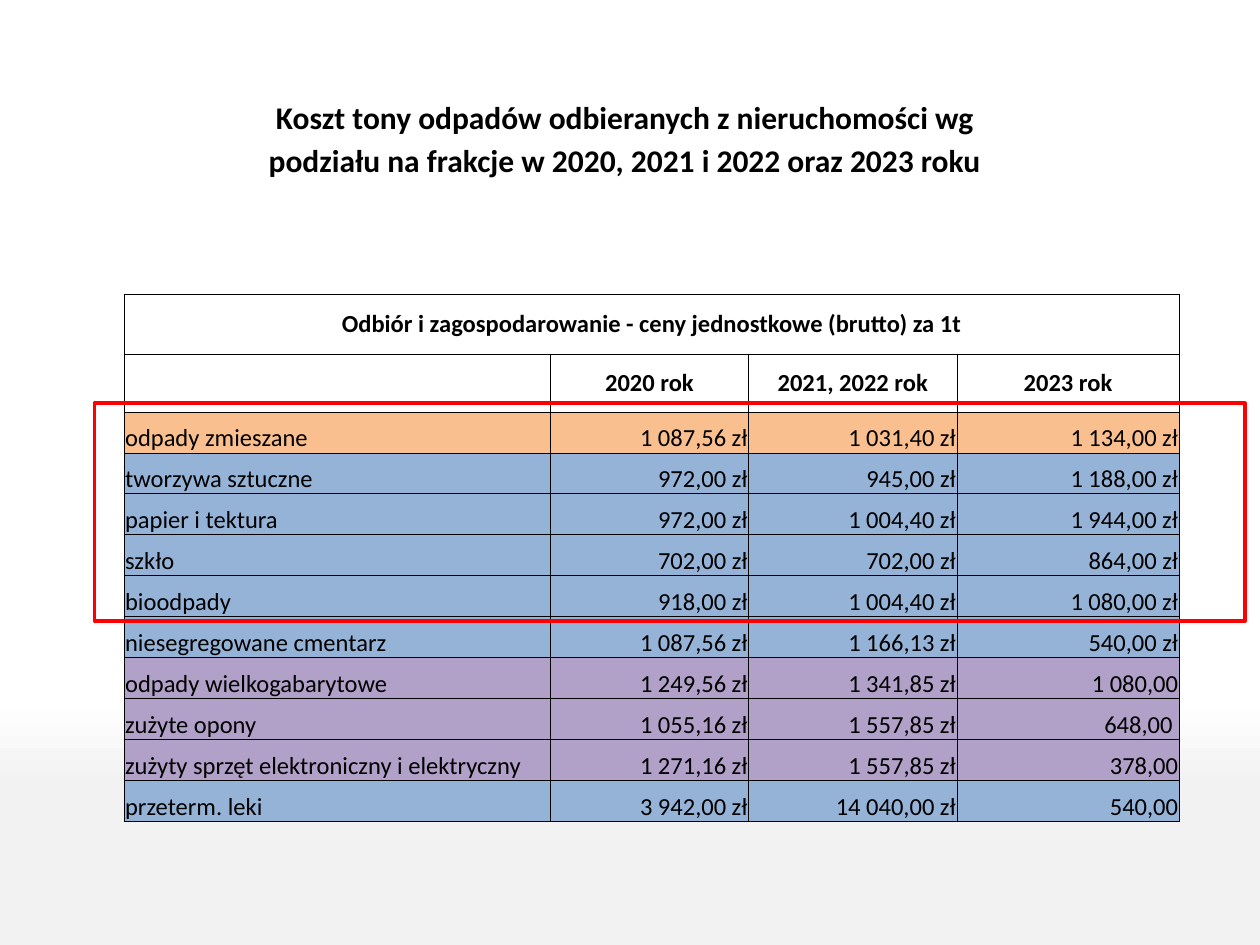
"""Build a slide comparing the cost per tonne of collected waste by fraction and year."""
from copy import deepcopy
from dataclasses import dataclass

from lxml import etree
from pptx import Presentation
from pptx.dml.color import RGBColor
from pptx.enum.shapes import MSO_SHAPE
from pptx.enum.text import MSO_ANCHOR, MSO_AUTO_SIZE, PP_ALIGN
from pptx.oxml.ns import qn
from pptx.util import Pt

RECTANGLE = MSO_SHAPE.RECTANGLE
MIDDLE, BOTTOM = MSO_ANCHOR.MIDDLE, MSO_ANCHOR.BOTTOM
LEFT, CENTER, RIGHT = PP_ALIGN.LEFT, PP_ALIGN.CENTER, PP_ALIGN.RIGHT
FIT_SHAPE = MSO_AUTO_SIZE.SHAPE_TO_FIT_TEXT


@dataclass(frozen=True)
class Theme:
    font: str = "Calibri"
    title_size: int = 18
    table_size: int = 14
    text: str = "000000"
    border: str = "000000"
    highlight: str = "FF0000"
    mixed: str = "FABF8F"
    sorted: str = "95B3D7"
    bulky: str = "B1A0C7"
    background: tuple = ((0, "FFFFFF"), (0.74, "FFFFFF"), (0.83, "F2F2F2"), (1, "F2F2F2"))


theme = Theme()


def style_paragraph(paragraph, size, bold, alignment):
    paragraph.alignment = alignment
    paragraph.font.name = theme.font
    paragraph.font.size = Pt(size)
    paragraph.font.bold = bold
    paragraph.font.color.rgb = RGBColor.from_string(theme.text)


def add_borders(cell):
    properties = cell._tc.get_or_add_tcPr()
    for side in ("a:lnL", "a:lnR", "a:lnT", "a:lnB"):
        line = etree.SubElement(properties, qn(side), w=str(Pt(0.5)))
        fill = etree.SubElement(line, qn("a:solidFill"))
        etree.SubElement(fill, qn("a:srgbClr"), val=theme.border)


presentation = Presentation()
presentation.slide_width, presentation.slide_height = Pt(720), Pt(540)
slide = presentation.slides.add_slide(presentation.slide_layouts[6])

background = slide.background.fill
background.gradient()
background.gradient_angle = 270
stop_list = slide.element.find(".//" + qn("a:gsLst"))
for _ in range(len(theme.background) - len(stop_list)):
    stop_list.append(deepcopy(stop_list[0]))
for stop, (position, color) in zip(background.gradient_stops, theme.background):
    stop.position = position
    stop.color.rgb = RGBColor.from_string(color)

title = slide.shapes.add_textbox(Pt(139), Pt(49), Pt(436.3), Pt(57.6)).text_frame
title.word_wrap = True
title.auto_size = FIT_SHAPE
title.text = (
    "Koszt tony odpadów odbieranych z nieruchomości wg podziału na frakcje "
    "w 2020, 2021 i 2022 oraz 2023 roku"
)
title_paragraph = title.paragraphs[0]
style_paragraph(title_paragraph, theme.title_size, True, CENTER)
title_paragraph.line_spacing = 1.15
title_paragraph.space_before = Pt(7.3)

header_rows = [
    (None, ("Odbiór i zagospodarowanie - ceny jednostkowe (brutto) za 1t", "", "", "")),
    (None, ("", "2020 rok", "2021, 2022 rok", "2023 rok")),
]
price_rows = [
    (theme.mixed, ("odpady zmieszane", "1 087,56 zł", "1 031,40 zł", "1 134,00 zł")),
    (theme.sorted, ("tworzywa sztuczne", "972,00 zł", "945,00 zł", "1 188,00 zł")),
    (theme.sorted, ("papier i tektura", "972,00 zł", "1 004,40 zł", "1 944,00 zł")),
    (theme.sorted, ("szkło", "702,00 zł", "702,00 zł", "864,00 zł")),
    (theme.sorted, ("bioodpady", "918,00 zł", "1 004,40 zł", "1 080,00 zł")),
    (theme.sorted, ("niesegregowane cmentarz", "1 087,56 zł", "1 166,13 zł", "540,00 zł")),
    (theme.bulky, ("odpady wielkogabarytowe", "1 249,56 zł", "1 341,85 zł", "1 080,00")),
    (theme.bulky, ("zużyte opony", "1 055,16 zł", "1 557,85 zł", "648,00 ")),
    (theme.bulky, ("zużyty sprzęt elektroniczny i elektryczny", "1 271,16 zł", "1 557,85 zł", "378,00")),
    (theme.sorted, ("przeterm. leki", "3 942,00 zł", "14 040,00 zł", "540,00")),
]
rows = header_rows + price_rows
column_widths = (243.6, 113.4, 119, 127)
row_heights = [34.3, 33.1] + [23.43] * len(price_rows)

table = slide.shapes.add_table(
    len(rows), len(column_widths), Pt(70.9), Pt(168), Pt(sum(column_widths)), Pt(sum(row_heights))
).table
table.first_row = False
table.horz_banding = False
for column, width in zip(table.columns, column_widths):
    column.width = Pt(width)
for row, height in zip(table.rows, row_heights):
    row.height = Pt(height)

for row_index, (color, texts) in enumerate(rows):
    is_header = row_index < len(header_rows)
    for column_index, text in enumerate(texts):
        cell = table.cell(row_index, column_index)
        cell.margin_left = cell.margin_right = cell.margin_top = Pt(0.6)
        cell.margin_bottom = 0
        cell.vertical_anchor = MIDDLE if is_header else BOTTOM
        cell.text = text
        alignment = CENTER if is_header else RIGHT if column_index else LEFT
        style_paragraph(cell.text_frame.paragraphs[0], theme.table_size, is_header, alignment)
        add_borders(cell)
        if color:
            cell.fill.solid()
            cell.fill.fore_color.rgb = RGBColor.from_string(color)
        else:
            cell.fill.background()
table.cell(0, 0).merge(table.cell(0, len(column_widths) - 1))

highlight = slide.shapes.add_shape(RECTANGLE, Pt(54), Pt(230.4), Pt(657.4), Pt(124.6))
highlight.shadow.inherit = False
highlight.fill.background()
highlight.line.color.rgb = RGBColor.from_string(theme.highlight)
highlight.line.width = Pt(2)

presentation.save("out.pptx")
